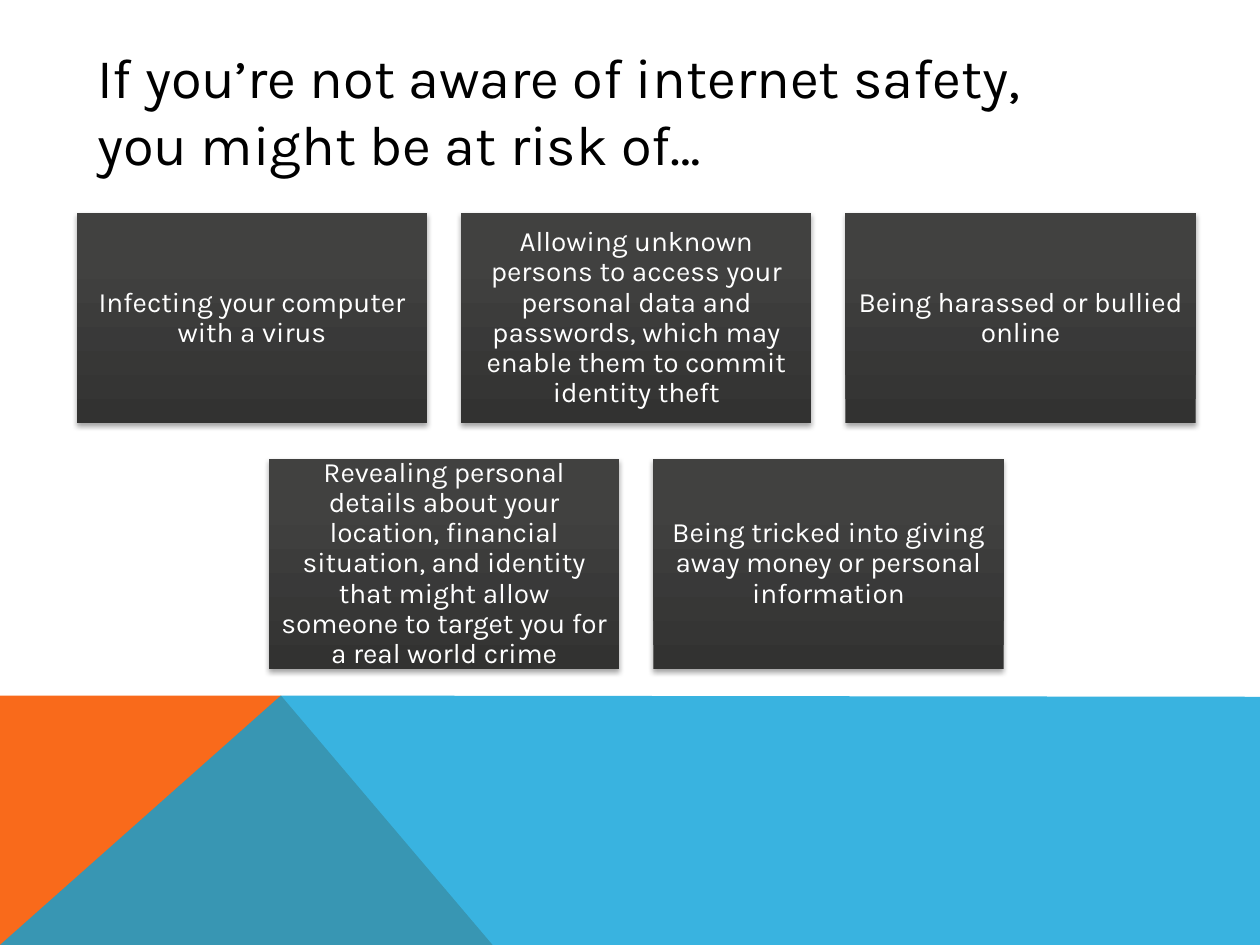
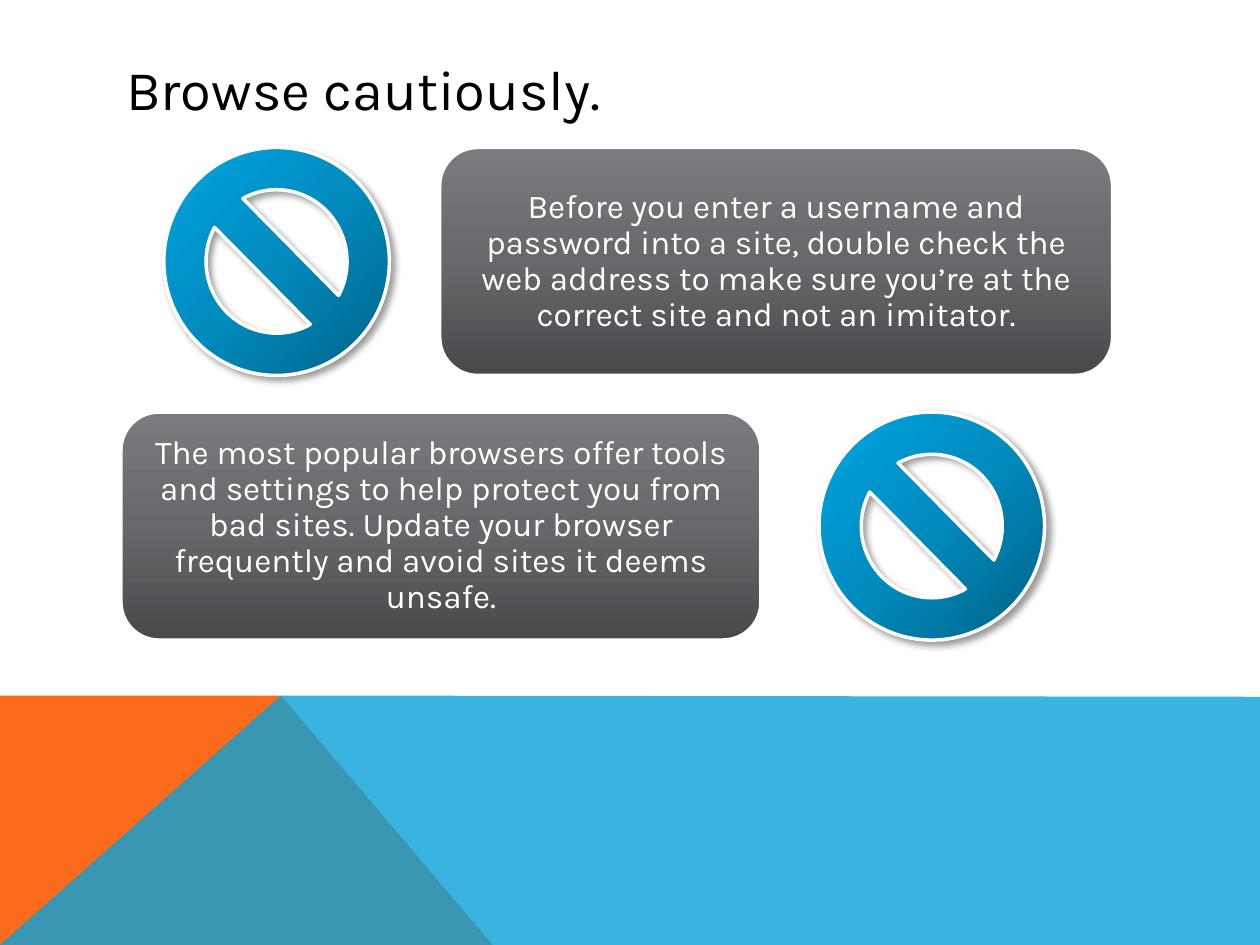
from lxml import etree
from pptx import Presentation
from pptx import util as u
from pptx.dml import color
from pptx.enum import shapes, text
from pptx.oxml import ns

FONT = "Karla"
BLACK, WHITE = "000000", "FFFFFF"
ORANGE, BLUE = "F96A1B", "08A1D9"
DARK = [(0, "323231"), (80, "414140"), (100, "414140")]
GREY = [(0, "47494B"), (50, "66686B"), (100, "797B7E")]
AZURE = [(0, "006285"), (50, "008BBE"), (100, "00A5E1")]
KIND = shapes.MSO_SHAPE

RISKS = [
    ["Infecting your computer with a virus",
     "Allowing unknown persons to access your personal data and passwords, "
     "which may enable them to commit identity theft",
     "Being harassed or bullied online"],
    ["Revealing personal details about your location, financial situation, "
     "and identity that might allow someone to target you for a real world crime",
     "Being tricked into giving away money or personal information"],
]
TIPS = [
    ("Before you enter a username and password into a site, double check the "
     "web address to make sure you’re at the correct site and not an imitator.",
     3.49, 5.34, 1.3),
    ("The most popular browsers offer tools and settings to help protect you "
     "from bad sites. Update your browser frequently and avoid sites it deems unsafe.",
     0.96, 5.08, 6.5),
]


def rgb(code):
    return color.RGBColor.from_string(code)


def node(parent, tag, **attrs):
    return etree.SubElement(parent, ns.qn(tag), {k: str(v) for k, v in attrs.items()})


def write(shape, words, size=16, tint=WHITE, align=text.PP_ALIGN.CENTER,
          inset=None, spacing=None):
    frame = shape.text_frame
    frame.word_wrap = True
    frame.auto_size = text.MSO_AUTO_SIZE.NONE
    frame.vertical_anchor = text.MSO_ANCHOR.MIDDLE
    if inset is not None:
        frame.margin_left = frame.margin_right = u.Inches(inset)
        frame.margin_top = frame.margin_bottom = u.Inches(inset)
    para = frame.paragraphs[0]
    para.alignment = align
    para.line_spacing = spacing
    run = para.add_run()
    run.text = words
    run.font.size = u.Pt(size)
    run.font.name = FONT
    run.font.color.rgb = rgb(tint)


def blend(shape, stops, angle):
    shape.fill.gradient()
    shape.fill.gradient_angle = angle
    group = next(shape.element.iter(ns.qn("a:gsLst")))
    group.clear()
    for place, code in stops:
        stop = node(group, "a:gs", pos=place * 1000)
        node(stop, "a:srgbClr", val=code)


def shade(shape, alpha, blur, dist, angle):
    effect = next(shape.element.iter(ns.qn("a:effectLst")))
    outer = node(effect, "a:outerShdw", blurRad=u.Pt(blur), dist=u.Pt(dist),
                 dir=angle * 60000, rotWithShape=0)
    tint = node(outer, "a:srgbClr", val=BLACK)
    node(tint, "a:alpha", val=alpha * 1000)


def block(slide, kind, left, top, width, height, stops, angle=90, edge=None):
    shape = slide.shapes.add_shape(kind, *map(u.Inches, (left, top, width, height)))
    shape.shadow.inherit = False
    blend(shape, stops, angle)
    if edge:
        shape.line.color.rgb = rgb(edge)
        shape.line.width = u.Pt(2)
    else:
        shape.line.fill.background()
    return shape


def band(slide, points, code, alpha=100):
    first, *rest = [(u.Inches(x), u.Inches(y)) for x, y in points]
    pen = slide.shapes.build_freeform(*first)
    pen.add_line_segments(rest)
    shape = pen.convert_to_shape()
    shape.shadow.inherit = False
    shape.fill.solid()
    shape.fill.fore_color.rgb = rgb(code)
    shape.line.fill.background()
    if alpha < 100:
        tint = next(shape.element.iter(ns.qn("a:srgbClr")))
        node(tint, "a:alpha", val=alpha * 1000)
    slide.slide_layout.shapes.element.append(shape.element)


def footer(slide):
    band(slide, [(0, 7.5), (0, 5.52), (2.23, 5.52), (3.91, 7.5)], ORANGE)
    band(slide, [(0, 7.5), (2.23, 5.52), (10, 5.53), (10, 7.5)], BLUE, 80)


def titled(deck, words, left, top):
    slide = deck.slides.add_slide(deck.slide_layouts[5])
    title = slide.shapes.title
    title.left, title.top = u.Inches(left), u.Inches(top)
    title.width, title.height = u.Inches(8.22), u.Inches(0.6)
    write(title, words, size=32, tint=BLACK, align=text.PP_ALIGN.LEFT)
    return slide


def risks(slide):
    for row, items in enumerate(RISKS):
        shift = (3 - len(items)) / 2
        for col, words in enumerate(items):
            card = block(slide, KIND.RECTANGLE, 0.61 + 3.05 * (col + shift),
                         1.69 + 1.95 * row, 2.78, 1.67, DARK)
            shade(card, 35, 3.1, 1.8, 90)
            write(card, words, inset=0.07, spacing=0.9)


def tips(slide):
    for row, (words, left, width, sign) in enumerate(TIPS):
        top = 1.17 + 2.1 * row
        card = block(slide, KIND.ROUNDED_RECTANGLE, left, top, width, 1.81,
                     GREY, edge=WHITE)
        write(card, words, size=19, inset=0.17, spacing=0.9)
        ban = block(slide, KIND.NO_SYMBOL, sign, top, 1.79, 1.81,
                    AZURE, angle=135, edge=WHITE)
        shade(ban, 40, 4, 3, 45)


def main():
    deck = Presentation()
    deck.slide_width, deck.slide_height = u.Inches(10), u.Inches(7.5)
    slide = titled(deck, "If you’re not aware of internet safety, "
                   "you might be at risk of…", 0.67, 0.57)
    footer(slide)
    risks(slide)
    tips(titled(deck, "Browse cautiously.", 0.9, 0.4))
    deck.save("out.pptx")


if __name__ == "__main__":
    main()
